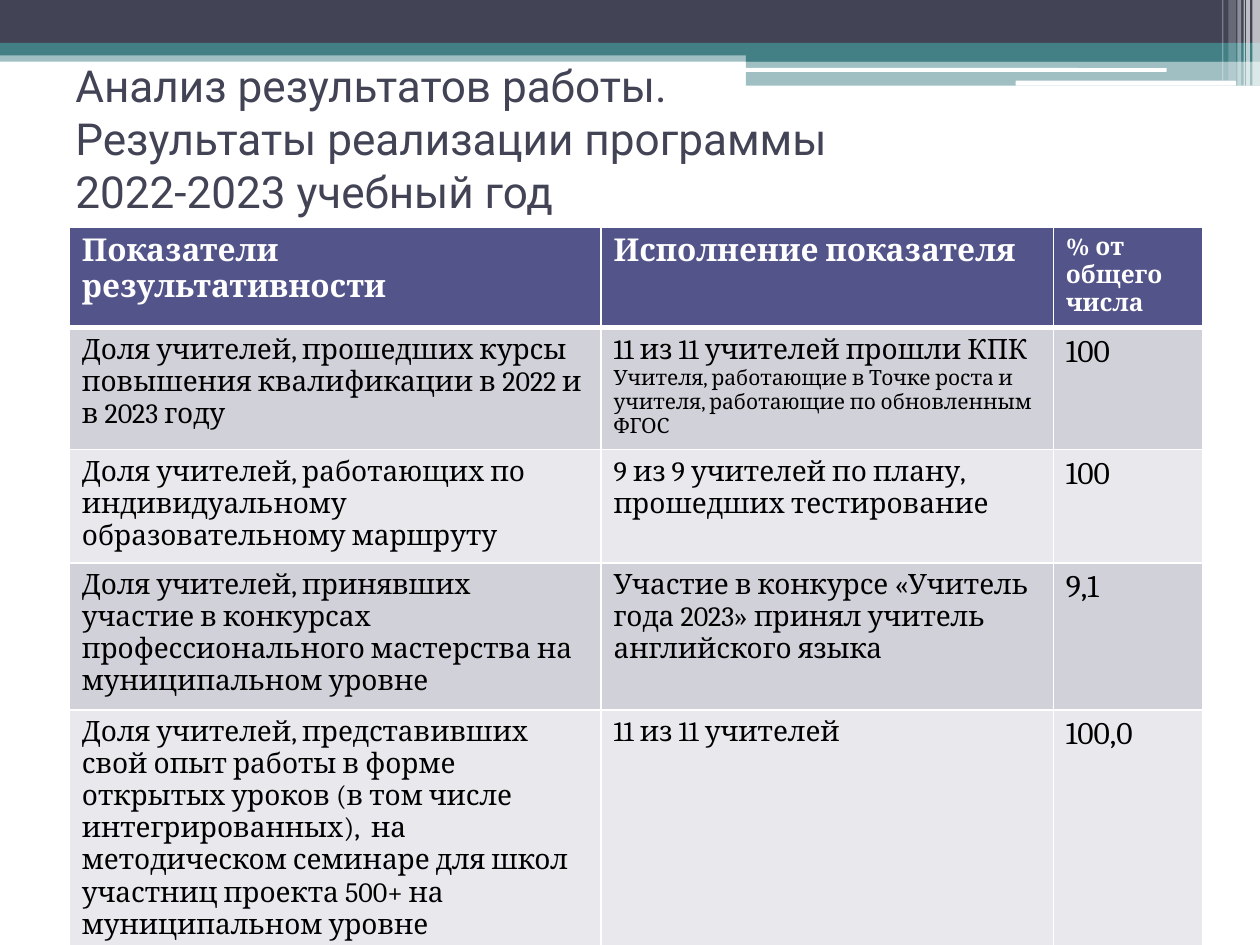
from dataclasses import dataclass

from lxml import etree
from pptx import Presentation
from pptx import util as u
from pptx.dml.color import RGBColor
from pptx.enum import shapes, text
from pptx.oxml import ns


@dataclass(frozen=True)
class Theme:
    ink: str = "424456"
    teal: str = "438086"
    white: str = "FFFFFF"
    black: str = "000000"
    header: str = "53548A"
    bands: tuple = ("D1D1DA", "E9E9ED")
    title_font: str = "Roboto"
    table_font: str = "Cambria"
    title_size: float = 25.2
    large: int = 18
    body: int = 16
    small: int = 14
    note: int = 12
    rule: int = 1
    header_rule: int = 3


THEME = Theme()

TITLE = ("Анализ результатов работы. \v"
         "Результаты реализации программы \v"
         "2022-2023 учебный год")

HEADINGS = ("Показатели результативности", "Исполнение показателя", "% от общего числа")
INDICATORS = (
    ("Доля учителей, прошедших курсы повышения квалификации в 2022 и в 2023 году",
     "11 из 11 учителей прошли КПК\n"
     "Учителя, работающие в Точке роста и учителя, работающие по обновленным ФГОС",
     "100"),
    ("Доля учителей, работающих по индивидуальному образовательному маршруту",
     "9 из 9 учителей по плану, прошедших тестирование",
     "100"),
    ("Доля учителей, принявших участие в конкурсах профессионального мастерства "
     "на муниципальном уровне",
     "Участие в конкурсе «Учитель года 2023» принял учитель английского языка",
     "9,1"),
    ("Доля учителей, представивших свой опыт работы в форме открытых уроков "
     "(в том числе интегрированных),  на  методическом семинаре для школ "
     "участниц проекта 500+ на муниципальном уровне",
     "11 из 11 учителей",
     "100,0"),
)
COLUMN_WIDTHS = (4.22, 3.59, 1.19)
ROW_HEIGHTS = (0.78, 0.95, 0.88, 1.16, 1.66)

# left, top, width, height, opacity in percent
TEAL_BANDS = (
    (0, 0.34, 10, 0.1, 100),
    (5.92, 0.39, 4.08, 0.1, 100),
    (5.92, 0.48, 4.08, 0.2, 50),
)
WHITE_BARS = ((5.91, 0.54, 3.35, 0.03), (8.06, 0.64, 1.75, 0.04))
# left, width, height, opacity in percent
CORNER_STRIPES = (
    (9.94, 0.06, 0.68, 65),
    (9.89, 0.03, 0.68, 65),
    (9.87, 0.01, 0.68, 60),
    (9.82, 0.03, 0.68, 40),
    (9.75, 0.06, 0.64, 20),
    (9.7, 0.01, 0.64, 30),
)


def paint(fill, color, opacity=100):
    fill.solid()
    fill.fore_color.rgb = RGBColor.from_string(color)
    if opacity < 100:
        tint = fill._xPr.find(".//" + ns.qn("a:srgbClr"))
        etree.SubElement(tint, ns.qn("a:alpha"), val=str(opacity * 1000))


def add_band(slide, box, color, opacity=100, kind=shapes.MSO_SHAPE.RECTANGLE):
    band = slide.shapes.add_shape(kind, *map(u.Inches, box))
    band.shadow.inherit = False
    band.line.fill.background()
    paint(band.fill, color, opacity)


def add_header_art(slide):
    add_band(slide, (0, 0.4, 10, 0.09), THEME.teal, 50)
    add_band(slide, (0, 0, 10, 0.34), THEME.ink)
    for *box, opacity in TEAL_BANDS:
        add_band(slide, box, THEME.teal, opacity)
    for box in WHITE_BARS:
        add_band(slide, box, THEME.white, kind=shapes.MSO_SHAPE.ROUNDED_RECTANGLE)
    for left, width, height, opacity in CORNER_STRIPES:
        add_band(slide, (left, 0, width, height), THEME.white, opacity)


def style_font(font, color, **values):
    font.color.rgb = RGBColor.from_string(color)
    for name, value in values.items():
        setattr(font, name, value)


def add_title(slide):
    heading = slide.shapes.add_textbox(*map(u.Inches, (0.5, 0.55, 9, 1.09)))
    frame = heading.text_frame
    for name, value in {"word_wrap": True,
                        "vertical_anchor": text.MSO_ANCHOR.MIDDLE,
                        "text": TITLE}.items():
        setattr(frame, name, value)
    for line in frame.paragraphs[0].runs:
        style_font(line.font, THEME.ink, name=THEME.title_font, size=u.Pt(THEME.title_size))


def add_borders(cell, top, bottom):
    """Draw white cell borders; must run before the cell's fill is set."""
    properties = cell._tc.get_or_add_tcPr()
    widths = {"lnL": THEME.rule, "lnR": THEME.rule, "lnT": top, "lnB": bottom}
    for side, width in widths.items():
        border = etree.SubElement(properties, ns.qn("a:" + side), w=str(u.Pt(width)))
        solid = etree.SubElement(border, ns.qn("a:solidFill"))
        etree.SubElement(solid, ns.qn("a:srgbClr"), val=THEME.white)


def fill_cell(cell, wording, sizes, color, background, bold=False):
    """Write the wording, with one type size for each paragraph."""
    cell.text = wording
    for paragraph, size in zip(cell.text_frame.paragraphs, sizes):
        style_font(paragraph.runs[0].font, color, name=THEME.table_font,
                   size=u.Pt(size), bold=bold)
    paint(cell.fill, background)


def add_results_table(slide):
    rows = (HEADINGS, *INDICATORS)
    box = (0.55, 1.8, sum(COLUMN_WIDTHS), sum(ROW_HEIGHTS))
    table = slide.shapes.add_table(len(rows), len(HEADINGS), *map(u.Inches, box)).table
    for column, width in zip(table.columns, COLUMN_WIDTHS):
        column.width = u.Inches(width)
    for row, height in zip(table.rows, ROW_HEIGHTS):
        row.height = u.Inches(height)

    heading_sizes = ((THEME.large,), (THEME.large,), (THEME.small,))
    body_sizes = ((THEME.body,), (THEME.body, THEME.note), (THEME.large,))
    for r, wordings in enumerate(rows):
        is_header = r == 0
        color = THEME.white if is_header else THEME.black
        background = THEME.header if is_header else THEME.bands[(r - 1) % 2]
        top = THEME.header_rule if r == 1 else THEME.rule
        bottom = THEME.header_rule if is_header else THEME.rule
        column_sizes = heading_sizes if is_header else body_sizes
        for c, (wording, sizes) in enumerate(zip(wordings, column_sizes)):
            cell = table.cell(r, c)
            add_borders(cell, top, bottom)
            fill_cell(cell, wording, sizes, color, background, bold=is_header)


def main():
    deck = Presentation()
    deck.slide_width, deck.slide_height = u.Inches(10), u.Inches(7.5)
    slide = deck.slides.add_slide(deck.slide_layouts[6])
    add_header_art(slide)
    add_title(slide)
    add_results_table(slide)
    deck.save("out.pptx")


if __name__ == "__main__":
    main()
